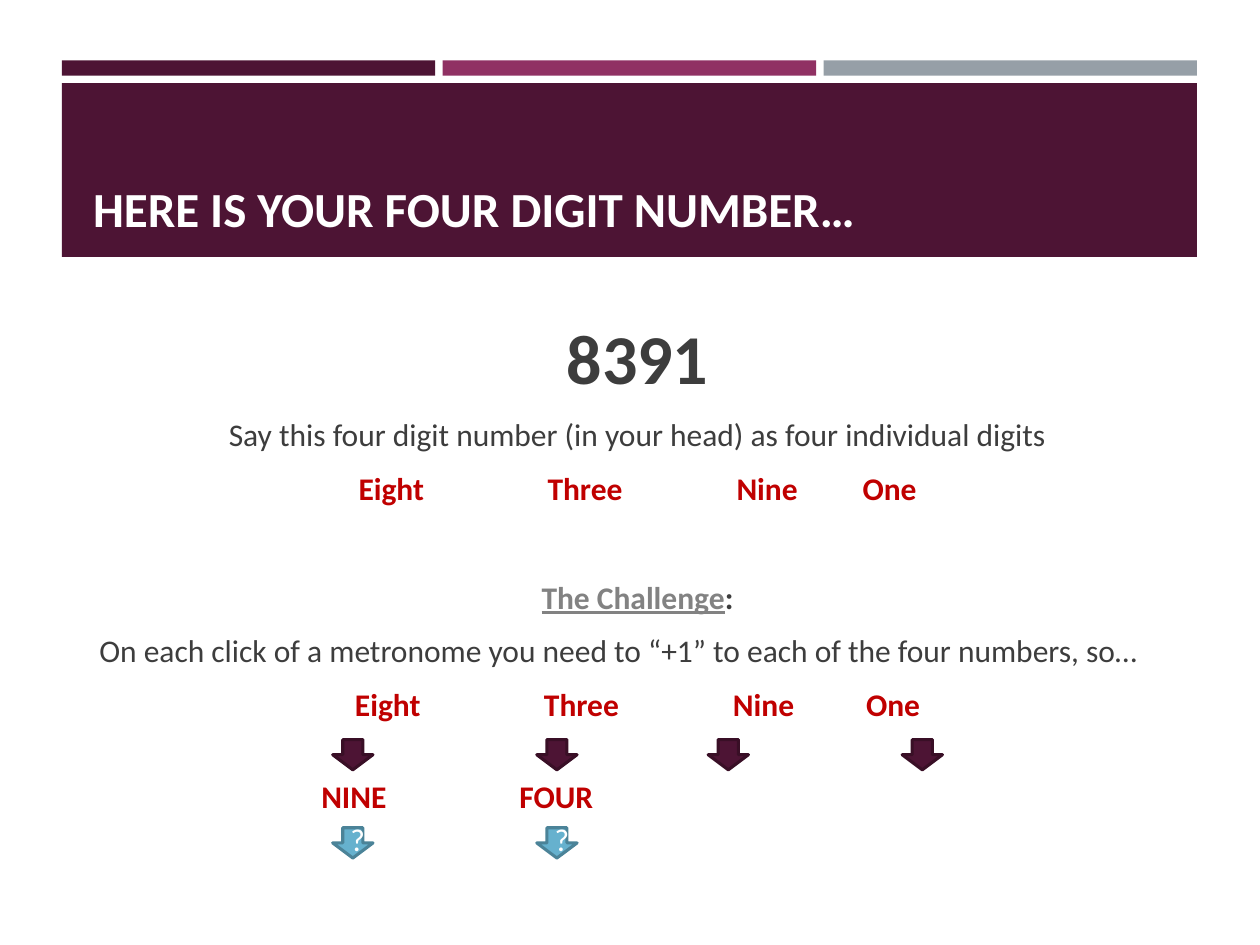
from lxml import etree
from pptx import Presentation
from pptx import util as u
from pptx.dml.color import RGBColor
from pptx.enum import shapes, text
from pptx.oxml import ns

PLUM, RED, BODY, WHITE = "4D1434", "C00000", "3D3D3D", "FFFFFF"
MIDDLE, LEFT = text.PP_ALIGN.CENTER, text.PP_ALIGN.LEFT
RECTANGLE = shapes.MSO_SHAPE.RECTANGLE
ARROW = shapes.MSO_SHAPE.DOWN_ARROW
TAB_STOPS = (0.75, 1.5, 2.25, 3, 3.5, 4)


def color(value):
    return RGBColor.from_string(value)


def apply(target, formats):
    for name, value in formats.items():
        setattr(target, name, value)


def add_block(page, kind, box, fill, line=None):
    block = page.shapes.add_shape(kind, *map(u.Inches, box))
    block.shadow.inherit = False
    block.fill.solid()
    block.fill.fore_color.rgb = color(fill)
    if line:
        block.line.color.rgb = color(line)
        block.line.width = u.Pt(1.75)
    else:
        block.line.fill.background()
    return block


def add_span(para, words, size, tint, **formats):
    span = para.add_run()
    span.text = words
    apply(span.font, {"name": "Calibri", "size": u.Pt(size), **formats})
    span.font.color.rgb = color(tint)


def add_text_box(page, box, **formats):
    frame = page.shapes.add_textbox(*map(u.Inches, box)).text_frame
    apply(frame, {"word_wrap": True, **formats})
    return frame


def set_tab_stops(para):
    stops = etree.SubElement(para._p.get_or_add_pPr(), ns.qn("a:tabLst"))
    for stop in TAB_STOPS:
        etree.SubElement(stops, ns.qn("a:tab"), pos=str(u.Inches(stop)), algn="l")


def add_header(page, box):
    left, top, width, height = box
    gap, strip = 0.06, 0.12
    part = (width - 2 * gap) / 3
    for column, fill in enumerate((PLUM, "903163", "969FA7")):
        add_block(page, RECTANGLE, (left + column * (part + gap), top, part, strip), fill)
    band = top + strip + gap
    add_block(page, RECTANGLE, (left, band, width, height - strip - gap), PLUM)
    title = add_text_box(page, (left + 0.15, band + 0.09, width - 0.27, 1.18),
                         vertical_anchor=text.MSO_ANCHOR.BOTTOM)
    add_span(title.paragraphs[0], "HERE IS YOUR FOUR DIGIT NUMBER…", 28, WHITE, bold=True)


def add_instructions(page, box):
    rows = [
        (MIDDLE, 0, [("8391", 40, BODY, {"bold": True})]),
        (MIDDLE, 3.2, [("Say this four digit number (in your head) as four individual digits",
                        18, BODY, {})]),
        (MIDDLE, 3.2, [("Eight\t\tThree\t\tNine\t\tOne", 18, RED, {"bold": True})]),
        (MIDDLE, 34.4, [("The Challenge", 18, "828282", {"bold": True, "underline": True}),
                        (":", 18, BODY, {"bold": True})]),
        (LEFT, 3.2, [("On each click of a metronome you need to “+1” to each of the "
                      "four numbers, so…", 18, BODY, {})]),
        (MIDDLE, 3.2, [("Eight\t\tThree\t\tNine\t\t One", 18, RED, {"bold": True})]),
    ]
    frame = add_text_box(page, box, margin_top=u.Inches(0.17))
    for index, (align, before, spans) in enumerate(rows):
        para = frame.add_paragraph() if index else frame.paragraphs[0]
        apply(para, {"alignment": align, "space_before": u.Pt(before),
                     "space_after": u.Pt(6)})
        for words, size, tint, formats in spans:
            add_span(para, words, size, tint, **formats)
            if "\t" in words:
                set_tab_stops(para)


def add_answers(page, box):
    left, top, width, height = box
    arrow_size = (0.32, 0.24)
    columns = [left + offset for offset in (0, 1.62, 2.98, width - arrow_size[0])]
    for x in columns:
        add_block(page, ARROW, (x, top, *arrow_size), PLUM, "390F26")
    answers = [
        ("NINE", (left - 0.26, 1.33), {"margin_left": u.Inches(0.17)}, LEFT),
        ("FOUR", (left + 1.3, 0.95), {"word_wrap": False}, MIDDLE),
    ]
    for x, (word, (start, span_width), formats, align) in zip(columns, answers):
        label = add_text_box(page, (start, top + 0.25, span_width, 0.4), **formats)
        label.paragraphs[0].alignment = align
        add_span(label.paragraphs[0], word, 18, RED, bold=True)
        arrow = add_block(page, ARROW, (x, top + height - arrow_size[1], *arrow_size),
                          "66B1CE", "4B8398")
        arrow.text_frame.vertical_anchor = text.MSO_ANCHOR.MIDDLE
        arrow.text_frame.paragraphs[0].alignment = MIDDLE
        add_span(arrow.text_frame.paragraphs[0], "?", 18, WHITE)


def main():
    deck = Presentation()
    apply(deck, {"slide_width": u.Inches(10), "slide_height": u.Inches(7.5)})
    page = deck.slides.add_slide(deck.slide_layouts[6])
    add_header(page, (0.49, 0.48, 9.01, 1.56))
    add_instructions(page, (0.69, 2.33, 8.74, 3.97))
    add_answers(page, (2.64, 5.87, 4.84, 0.94))
    deck.save("out.pptx")


if __name__ == "__main__":
    main()
